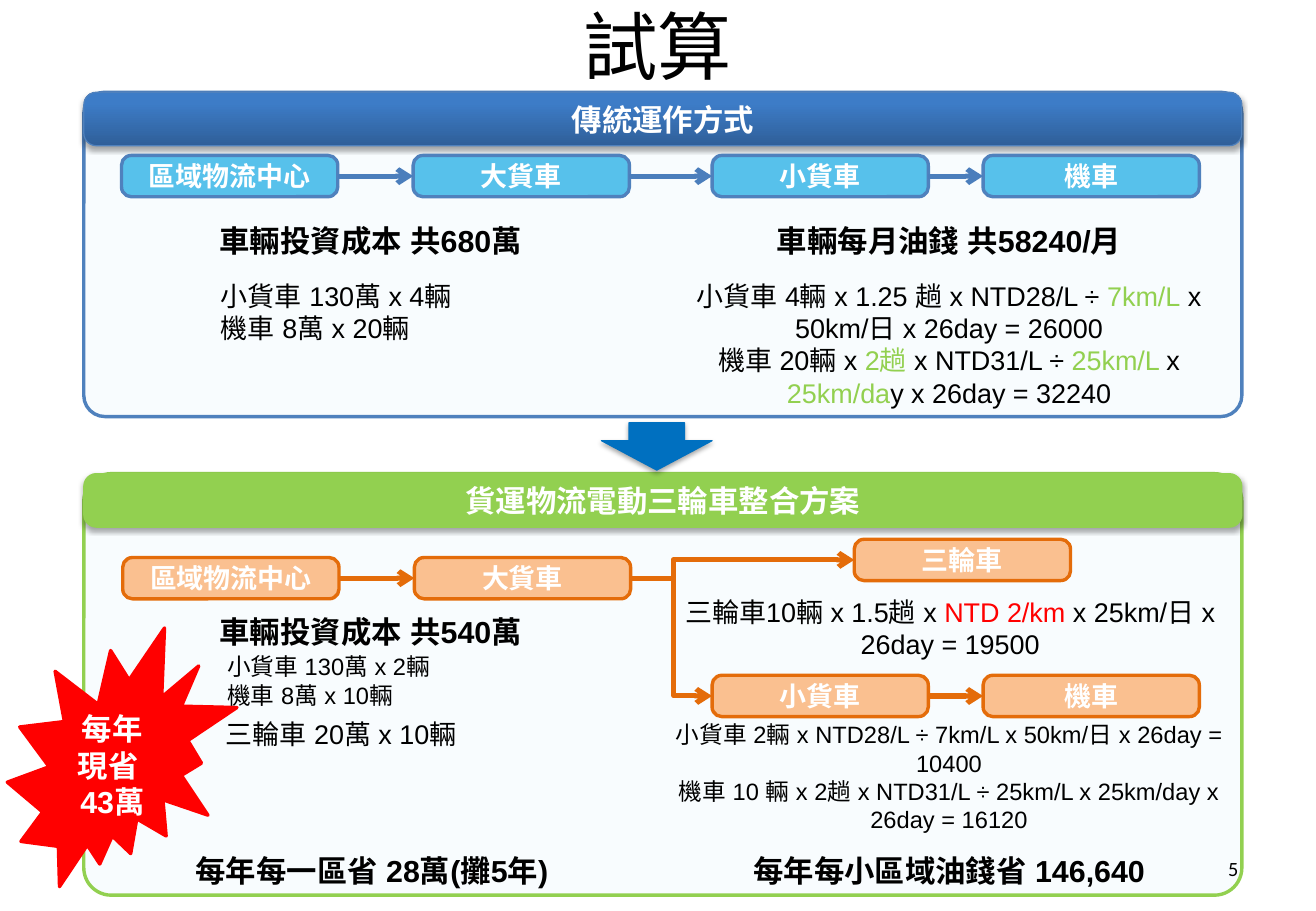
from dataclasses import dataclass
from typing import NamedTuple

from lxml.etree import SubElement
from pptx import Presentation
from pptx.dml.color import RGBColor
from pptx.enum.shapes import MSO_CONNECTOR, MSO_SHAPE
from pptx.enum.text import MSO_ANCHOR, PP_ALIGN
from pptx.oxml.ns import qn
from pptx.util import Inches, Pt


@dataclass(frozen=True)
class Theme:
    black: str = "000000"
    white: str = "FFFFFF"
    red: str = "FF0000"
    panel: str = "F8FCFE"
    blue: str = "4F81BD"
    wire: str = "4B7EBC"
    sky: str = "57C1EB"
    deep: str = "2F5F99"
    light: str = "3D7CC7"
    arrow: str = "0070C0"
    green: str = "92D050"
    orange: str = "E46C0A"
    peach: str = "FAC090"
    latin: str = "Arial"
    asian: str = "Noto Sans CJK SC"
    digit: str = "Calibri"
    title: int = 44
    head: int = 18
    body: int = 16
    small: int = 14
    page: int = 12


class Area(NamedTuple):
    col: float
    row: float
    cols: float
    rows: float


class Style(NamedTuple):
    size: int
    color: str = "000000"
    font: str = "Arial"
    bold: bool = False
    align: PP_ALIGN = PP_ALIGN.CENTER
    anchor: MSO_ANCHOR = MSO_ANCHOR.TOP


class Panel(NamedTuple):
    row: float
    rows: float
    line: str
    text: str
    fill: tuple


class Node(NamedTuple):
    key: str
    col: float
    row: float
    text: str
    fill: str
    line: str


class Link(NamedTuple):
    start: str
    end: str
    color: str
    bend: float = 0


class Note(NamedTuple):
    area: Area
    lines: list
    style: Style


T = Theme()
WIDE, HIGH = Inches(10.83), Inches(7.5)
COL, ROW = WIDE / 108.3, HIGH / 75
LEFT, MID, SPAN, HALF = 6.9, 54, 95.3, 48.2
BAND = 4.4
NODE = (17.8, 3.4)

LABEL = Style(T.body, T.white, T.asian, True, anchor=MSO_ANCHOR.MIDDLE)
BANNER = LABEL._replace(size=T.head)
HEAD = Style(T.head, bold=True)
SUM = Style(T.body)
ITEM = SUM._replace(align=PP_ALIGN.LEFT)

PANELS = [
    Panel(7.6, 26.7, T.blue, "傳統運作方式", (T.deep, T.light)),
    Panel(39, 34.7, T.green, "貨運物流電動三輪車整合方案", (T.green,)),
]
NODES = [
    *(Node(key, col, 12.8, text, T.sky, T.blue) for key, col, text in [
        ("hub", 10, "區域物流中心"), ("truck", 34, "大貨車"),
        ("van", 58.6, "小貨車"), ("bike", 80.9, "機車")]),
    *(Node(key, col, row, text, T.peach, T.orange) for key, col, row, text in [
        ("hub2", 10.1, 45.9, "區域物流中心"), ("truck2", 34.1, 45.9, "大貨車"),
        ("trike2", 70.3, 44.4, "三輪車"), ("van2", 58.6, 55.6, "小貨車"),
        ("bike2", 80.9, 55.6, "機車")]),
]
LINKS = [
    Link("hub", "truck", T.wire), Link("truck", "van", T.wire),
    Link("van", "bike", T.wire), Link("hub2", "truck2", T.orange),
    Link("truck2", "trike2", T.orange, 0.19),
    Link("truck2", "van2", T.orange, 0.53), Link("van2", "bike2", T.orange),
]
NOTES = [
    Note(Area(7, 17.8, 47, 3.2), ["車輛投資成本 共680萬"], HEAD),
    Note(Area(MID, 17.8, HALF, 3.2), ["車輛每月油錢 共58240/月"], HEAD),
    Note(Area(17.2, 22.5, 33.1, 5.5), ["小貨車 130萬 x 4輛", "機車 8萬 x 20輛"], ITEM),
    Note(Area(MID, 22.5, HALF, 5.5), [
        ["小貨車 4輛 x 1.25 趟 x NTD28/L ÷ ", ("7km/L", T.green),
         " x 50km/日 x 26day = 26000"],
        ["機車 20輛 x ", ("2趟 ", T.green), "x NTD31/L ÷ ", ("25km/L ", T.green),
         "x ", ("25km/da", T.green), "y x 26day = 32240"]], SUM),
    Note(Area(7, 50, 47, 3.2), ["車輛投資成本 共540萬"], HEAD),
    Note(Area(17.7, 53.2, 33.1, 5.5), ["小貨車 130萬 x 2輛", "機車 8萬 x 10輛"],
         ITEM._replace(size=T.small)),
    Note(Area(17.6, 58.6, 33.1, 5.5), ["三輪車 20萬 x 10輛"], ITEM),
    Note(Area(54.1, 48.5, HALF, 5.5), [
        ["三輪車10輛 x 1.5趟 x ", ("NTD 2/km ", T.red),
         "x 25km/日 x 26day = 19500"]], SUM),
    Note(Area(MID, 58.8, HALF, 5.5), [
        "小貨車 2輛 x NTD28/L ÷ 7km/L x 50km/日 x 26day = 10400",
        "機車 10 輛 x 2趟 x NTD31/L ÷ 25km/L x 25km/day x 26day = 16120"],
         SUM._replace(size=T.small)),
    Note(Area(7, 69.7, 47.2, 3.2), ["每年每一區省 28萬(攤5年)"], HEAD),
    Note(Area(MID, 69.7, HALF, 3.2), ["每年每小區域油錢省 146,640"], HEAD),
    Note(Area(77.6, 69.5, 25.3, 4), ["5"],
         Style(T.page, font=T.digit, align=PP_ALIGN.RIGHT, anchor=MSO_ANCHOR.MIDDLE)),
    Note(Area(1.4, 58, 15.7, 3.2), ["每年", "現省 ", "43萬"],
         HEAD._replace(color=T.white)),
]


def apply(item, form: dict) -> None:
    for name, value in form.items():
        setattr(item, name, value)


def place(area: Area) -> tuple:
    return (round(area.col * COL), round(area.row * ROW),
            round(area.cols * COL), round(area.rows * ROW))


def write(shape, lines: list, style: Style) -> None:
    frame = shape.text_frame
    apply(frame, {"word_wrap": True, "vertical_anchor": style.anchor})
    for index, line in enumerate(lines):
        para = frame.add_paragraph() if index else frame.paragraphs[0]
        para.alignment = style.align
        for part in [line] if isinstance(line, str) else line:
            text, color = (part, style.color) if isinstance(part, str) else part
            run = para.add_run()
            run.text = text
            apply(run.font, {"name": style.font, "size": Pt(style.size), "bold": style.bold})
            run.font.color.rgb = RGBColor.from_string(color)
            SubElement(run.font._element, qn("a:ea"), typeface=style.font)


def paint(shape, fill: tuple) -> None:
    if len(fill) == 1:
        shape.fill.solid()
        shape.fill.fore_color.rgb = RGBColor.from_string(fill[0])
        return
    shape.fill.gradient()
    shape.fill.gradient_angle = 90
    for stop, color, spot in zip(shape.fill.gradient_stops, fill, (0, 0.8)):
        stop.color.rgb = RGBColor.from_string(color)
        stop.position = spot


def stroke(shape, color: str, width: float) -> None:
    shape.line.width = Pt(width)
    shape.line.color.rgb = RGBColor.from_string(color)


def draw(slide, kind: MSO_SHAPE, area: Area, fill: tuple, line: str,
         width: float = 2, bends: tuple = ()):
    shape = slide.shapes.add_shape(kind, *place(area))
    shape.shadow.inherit = False
    paint(shape, fill)
    stroke(shape, line, width)
    for index, bend in enumerate(bends):
        shape.adjustments[index] = bend
    return shape


def shade(shape) -> None:
    effect = shape._element.spPr.find(qn("a:effectLst"))
    cast = SubElement(effect, qn("a:outerShdw"), blurRad=str(Pt(3.1)),
                      dist=str(Pt(1.8)), dir="5400000", rotWithShape="0")
    tint = SubElement(cast, qn("a:srgbClr"), val=T.black)
    SubElement(tint, qn("a:alpha"), val="35000")


def join(slide, link: Link, boxes: dict) -> None:
    kind = MSO_CONNECTOR.ELBOW if link.bend else MSO_CONNECTOR.STRAIGHT
    wire = slide.shapes.add_connector(kind, 0, 0, 0, 0)
    wire.begin_connect(boxes[link.start], 3)
    wire.end_connect(boxes[link.end], 1)
    stroke(wire, link.color, 3)
    SubElement(wire.line._get_or_add_ln(), qn("a:tailEnd"), type="arrow")
    props = wire._element.spPr
    SubElement(props, qn("a:effectLst"))
    if link.bend:
        SubElement(props.find(".//" + qn("a:avLst")), qn("a:gd"), name="adj1",
                   fmla=f"val {round(link.bend * 100000)}")


def main() -> None:
    deck = Presentation()
    apply(deck, {"slide_width": WIDE, "slide_height": HIGH})
    slide = deck.slides.add_slide(deck.slide_layouts[5])
    title = slide.shapes.title
    apply(title, dict(zip(("left", "top", "width", "height"),
                          place(Area(5.4, -2.6, 97.5, 12.5)))))
    write(title, ["試算"], Style(T.title, font=T.asian, anchor=MSO_ANCHOR.MIDDLE))

    for panel in PANELS:
        area = Area(LEFT, panel.row, SPAN, panel.rows)
        draw(slide, MSO_SHAPE.ROUNDED_RECTANGLE, area, (T.panel,), panel.line, bends=(0.065,))
        band = draw(slide, MSO_SHAPE.ROUNDED_RECTANGLE, area._replace(rows=BAND),
                    panel.fill, panel.line, 0.75, (0.235,))
        shade(band)
        write(band, [panel.text], BANNER)
    shade(draw(slide, MSO_SHAPE.DOWN_ARROW, Area(49.5, 34.8, 9.1, 3.9),
               (T.arrow,), T.arrow, 0.75, (0.5, 0.62)))

    boxes = {}
    for node in NODES:
        boxes[node.key] = draw(slide, MSO_SHAPE.ROUNDED_RECTANGLE,
                               Area(node.col, node.row, *NODE), (node.fill,), node.line,
                               bends=(0.235,))
        write(boxes[node.key], [node.text], LABEL)
    for link in LINKS:
        join(slide, link, boxes)
    draw(slide, MSO_SHAPE.EXPLOSION2, Area(0.6, 51.7, 18.9, 21.3), (T.red,), T.red)
    for note in NOTES:
        write(slide.shapes.add_textbox(*place(note.area)), note.lines, note.style)
    deck.save("out.pptx")


if __name__ == "__main__":
    main()
